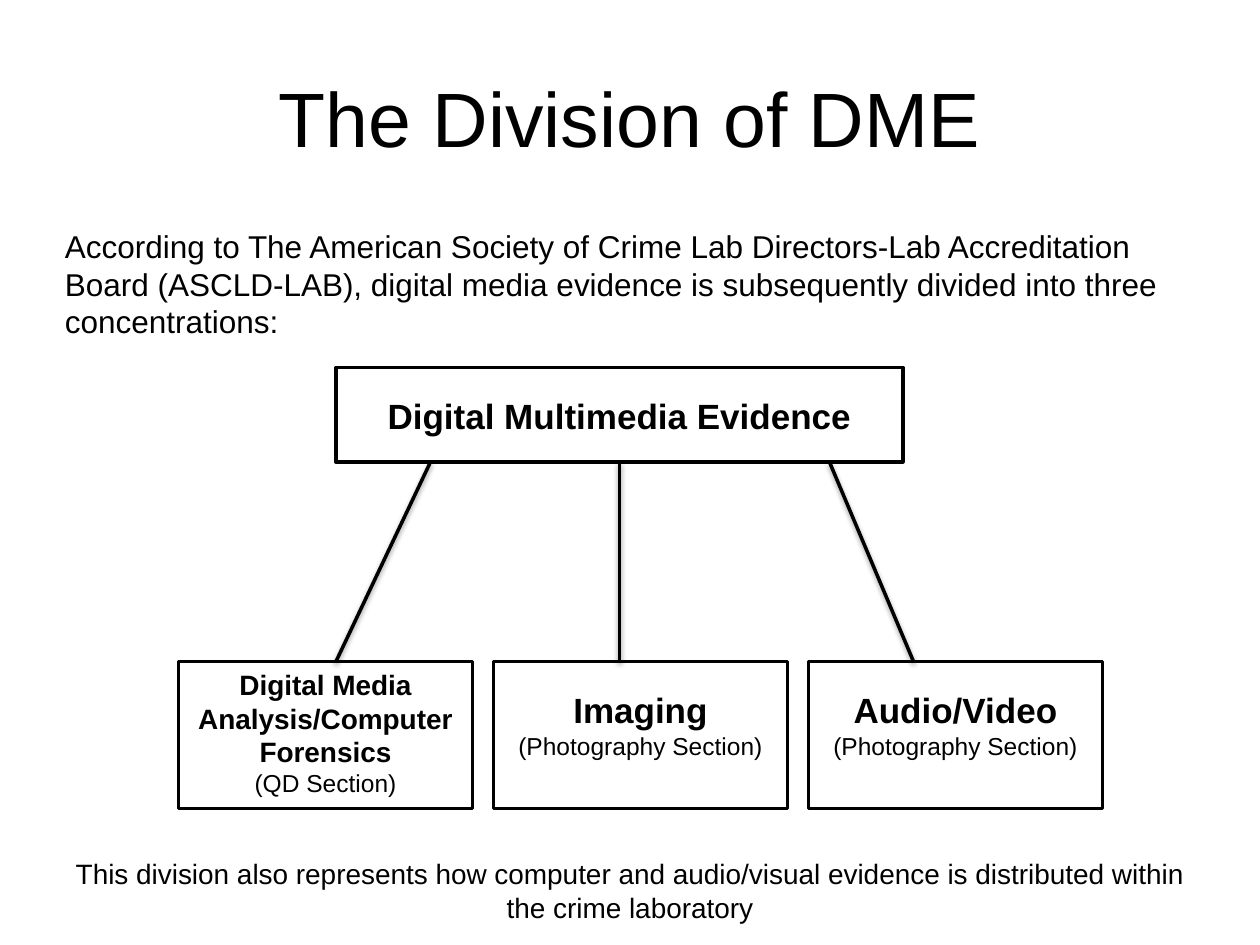
from dataclasses import dataclass

from lxml.etree import SubElement
from pptx import Presentation
from pptx.dml.color import RGBColor
from pptx.enum.shapes import MSO_CONNECTOR, MSO_SHAPE
from pptx.enum.text import MSO_ANCHOR, MSO_AUTO_SIZE, PP_ALIGN
from pptx.oxml.ns import qn
from pptx.util import Inches, Pt

COLORS = {"ink": "000000", "shadow": "000000"}
FONT = "Arial"
CELL = Inches(1) / 12  # the slide is 120 columns by 90 rows
SLIDE_COLS, SLIDE_ROWS = 120, 90
BOTTOM_SIDE = 2


@dataclass(frozen=True)
class Area:
    col: float
    row: float
    cols: float
    rows: float


@dataclass(frozen=True)
class Line:
    text: str
    size: int
    bold: bool = False


@dataclass(frozen=True)
class Section:
    heading: Line
    note: Line
    text_drop: int  # rows between the top of the box and its text
    text_rows: float


@dataclass(frozen=True)
class Branch:
    start_col: int
    end_col: int


def grid(n: float) -> int:
    return round(n * CELL)


def place(area: Area) -> list[int]:
    return [grid(n) for n in (area.col, area.row, area.cols, area.rows)]


def ink() -> RGBColor:
    return RGBColor.from_string(COLORS["ink"])


def set_outline(sp) -> None:
    sp.line.color.rgb = ink()
    sp.line.width = Pt(2)


def add_text(slide, area: Area, lines: list[Line], align=PP_ALIGN.CENTER,
             anchor=MSO_ANCHOR.TOP, auto_size=MSO_AUTO_SIZE.SHAPE_TO_FIT_TEXT) -> None:
    tf = slide.shapes.add_textbox(*place(area)).text_frame
    frame_format = {"word_wrap": True, "vertical_anchor": anchor, "auto_size": auto_size}
    for name, value in frame_format.items():
        setattr(tf, name, value)
    for i, line in enumerate(lines):
        p = tf.add_paragraph() if i else tf.paragraphs[0]
        p.alignment = align
        r = p.add_run()
        r.text = line.text
        font_format = {"name": FONT, "size": Pt(line.size), "bold": line.bold}
        for name, value in font_format.items():
            setattr(r.font, name, value)
        r.font.color.rgb = ink()


def add_box(slide, area: Area):
    sp = slide.shapes.add_shape(MSO_SHAPE.RECTANGLE, *place(area))
    sp.shadow.inherit = False
    sp.fill.background()
    set_outline(sp)
    return sp


def add_branch(slide, branch: Branch, root, root_area: Area, end_row: int) -> None:
    start_row = root_area.row + root_area.rows
    line = slide.shapes.add_connector(
        MSO_CONNECTOR.STRAIGHT, grid(branch.start_col), grid(start_row),
        grid(branch.end_col), grid(end_row))
    set_outline(line)
    if branch.start_col == root_area.col + root_area.cols / 2:
        line.begin_connect(root, BOTTOM_SIDE)
    add_soft_shadow(line)


def add_soft_shadow(line) -> None:
    effects = SubElement(line.element.spPr, qn("a:effectLst"))
    shadow = SubElement(effects, qn("a:outerShdw"), blurRad=str(Pt(3.1)),
                        dist=str(Pt(1.6)), dir="5400000", rotWithShape="0")
    color = SubElement(shadow, qn("a:srgbClr"), val=COLORS["shadow"])
    SubElement(color, qn("a:alpha"), val="38000")


TITLE = Area(6, 3.6, 108, 15)
INTRO = Area(5, 21, 108, 12.12)
CLOSING = Area(5, 81, 110, 7.68)
ROOT = Area(32, 35, 54, 9)
ROOT_TEXT = Area(32, 37, 54, 5.25)
FIRST_SECTION = Area(17, 63, 28, 14)
SECTION_STEP = 30

PHOTOGRAPHY = Line("(Photography Section)", 14)
SECTIONS = [
    Section(Line("Digital Media Analysis/Computer Forensics", 16, True),
            Line("(QD Section)", 14), 0, 13.68),
    Section(Line("Imaging", 20, True), PHOTOGRAPHY, 2, 8),
    Section(Line("Audio/Video", 20, True), PHOTOGRAPHY, 2, 8),
]
BRANCHES = [Branch(41, 32), Branch(59, 59), Branch(79, 87)]


def main() -> None:
    prs = Presentation()
    prs.slide_width, prs.slide_height = grid(SLIDE_COLS), grid(SLIDE_ROWS)
    slide = prs.slides.add_slide(prs.slide_layouts[6])

    add_text(slide, TITLE, [Line("The Division of DME", 44)],
             anchor=MSO_ANCHOR.MIDDLE, auto_size=MSO_AUTO_SIZE.NONE)
    add_text(slide, INTRO, [Line(
        "According to The American Society of Crime Lab Directors-Lab Accreditation "
        "Board (ASCLD-LAB), digital media evidence is subsequently divided into three "
        "concentrations:", 18)], align=PP_ALIGN.LEFT)

    root = add_box(slide, ROOT)
    add_text(slide, ROOT_TEXT, [Line("Digital Multimedia Evidence", 20, True)])
    for branch in BRANCHES:
        add_branch(slide, branch, root, ROOT, FIRST_SECTION.row)

    for i, section in enumerate(SECTIONS):
        col, row = FIRST_SECTION.col + i * SECTION_STEP, FIRST_SECTION.row
        add_box(slide, Area(col, row, FIRST_SECTION.cols, FIRST_SECTION.rows))
        add_text(slide, Area(col, row + section.text_drop, FIRST_SECTION.cols,
                             section.text_rows), [section.heading, section.note])

    add_text(slide, CLOSING, [Line(
        "This division also represents how computer and audio/visual evidence is "
        "distributed within the crime laboratory", 16)])
    prs.save("out.pptx")


if __name__ == "__main__":
    main()
